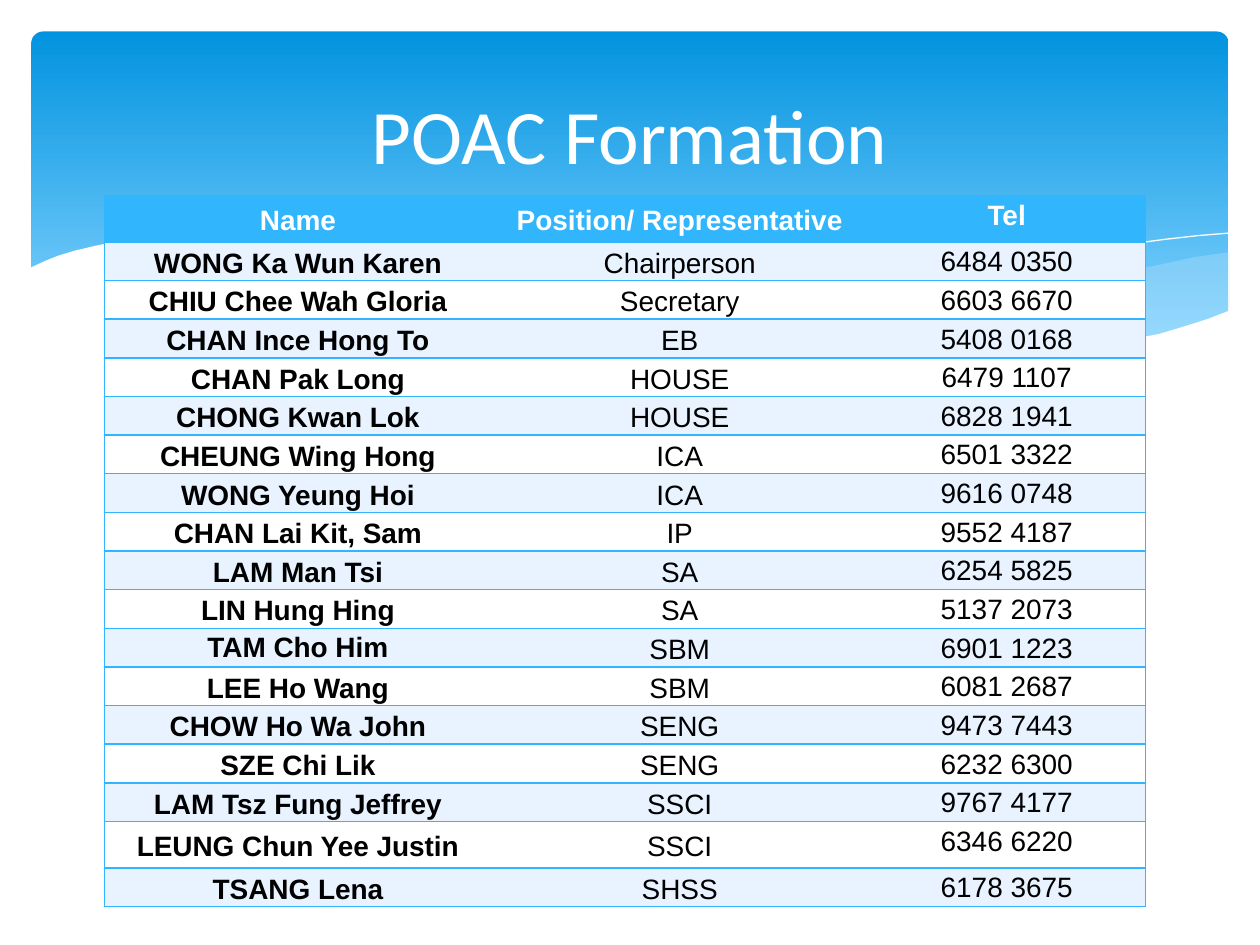
from lxml.etree import SubElement
from pptx import Presentation
from pptx.dml.color import RGBColor
from pptx.enum.shapes import MSO_SHAPE
from pptx.enum.text import MSO_ANCHOR, PP_ALIGN
from pptx.oxml.ns import qn
from pptx.util import Inches, Pt

WIDTH, HEIGHT = 10, 7.5
WHITE, BLACK = "FFFFFF", "000000"
SKY, PALE, MIST = "31B6FD", "E8F3FF", "C6E7FC"

# Table content
HEADER = ("Name", "Position/ Representative", "Tel")
MEMBERS = [
    ("WONG Ka Wun Karen", "Chairperson", "6484 0350"),
    ("CHIU Chee Wah Gloria", "Secretary", "6603 6670"),
    ("CHAN Ince Hong To", "EB", "5408 0168"),
    ("CHAN Pak Long", "HOUSE", "6479 1107"),
    ("CHONG Kwan Lok", "HOUSE", "6828 1941"),
    ("CHEUNG Wing Hong", "ICA", "6501 3322"),
    ("WONG Yeung Hoi", "ICA", "9616 0748"),
    ("CHAN Lai Kit, Sam", "IP", "9552 4187"),
    ("LAM Man Tsi", "SA", "6254 5825"),
    ("LIN Hung Hing", "SA", "5137 2073"),
    ("TAM Cho Him", "SBM", "6901 1223"),
    ("LEE Ho Wang", "SBM", "6081 2687"),
    ("CHOW Ho Wa John", "SENG", "9473 7443"),
    ("SZE Chi Lik", "SENG", "6232 6300"),
    ("LAM Tsz Fung Jeffrey", "SSCI", "9767 4177"),
    ("LEUNG Chun Yee Justin", "SSCI", "6346 6220"),
    ("TSANG Lena", "SHSS", "6178 3675"),
]
SINGLE_SPACED = "TAM Cho Him"
COLUMN_WIDTHS = (3.07, 2.99, 2.2)
ROW_HEIGHT, TALL_ROW_HEIGHT = 0.3035, 0.37
TALL_ROWS = (0, 16)

# Wave outlines, in inches
RIGHT_WAVE = [
    (9.76, 2), (9.48, 2.04), (9.21, 2.1), (8.91, 2.16), (8.61, 2.23), (8.05, 2.37),
    (7.53, 2.48), (7.06, 2.57), (6.61, 2.65), (6.91, 2.69), (7.19, 2.72), (7.45, 2.75),
    (7.69, 2.77), (8.03, 2.78), (8.35, 2.77), (8.63, 2.75), (8.89, 2.72), (9.13, 2.67),
    (9.35, 2.62), (9.49, 2.57), (9.63, 2.52), (9.76, 2.47)]
MIDDLE_WAVE = [
    (8.93, 2.73), (8.66, 2.69), (8.07, 2.6), (7.41, 2.47), (6.68, 2.31), (6.29, 2.22),
    (5.98, 2.14), (5.69, 2.08), (5.41, 2.03), (5.14, 1.98), (4.89, 1.94), (4.42, 1.89),
    (3.99, 1.86), (3.61, 1.85), (3.28, 1.87), (2.86, 1.91), (3.23, 1.96), (3.62, 2.03),
    (4.04, 2.11), (4.49, 2.22), (5.3, 2.4), (5.84, 2.52), (6.18, 2.58), (6.5, 2.64),
    (6.8, 2.68), (7.09, 2.72), (7.36, 2.75), (7.61, 2.77), (7.96, 2.78), (8.28, 2.78),
    (8.57, 2.77), (8.76, 2.75)]
FALLING_CURVE = [
    (3.09, 1.95), (3.28, 1.92), (3.53, 1.89), (3.87, 1.87), (4.33, 1.87), (4.69, 1.89),
    (5.1, 1.92), (5.56, 1.97), (6.08, 2.04), (6.65, 2.13), (7.27, 2.26), (7.95, 2.41),
    (8.69, 2.61), (9.07, 2.72)]
RISING_CURVE = [
    (6.13, 2.57), (6.53, 2.46), (6.95, 2.35), (7.48, 2.23), (8.06, 2.1), (8.66, 1.99),
    (8.95, 1.94), (9.24, 1.9), (9.51, 1.87), (9.75, 1.85)]
WHITE_WAVE = [
    (9.77, 2.46), (9.59, 2.53), (9.4, 2.59), (9.2, 2.65), (8.99, 2.69), (8.75, 2.73),
    (8.5, 2.75), (8.23, 2.77), (7.93, 2.76), (7.61, 2.75), (7.26, 2.72), (6.88, 2.68),
    (6.48, 2.62), (6.03, 2.54), (5.55, 2.45), (5.03, 2.33), (4.47, 2.2), (3.91, 2.07),
    (3.4, 1.97), (2.92, 1.9), (2.5, 1.86), (2.11, 1.84), (1.77, 1.84), (1.46, 1.85),
    (1.19, 1.87), (0.95, 1.91), (0.76, 1.95), (0.59, 1.99), (0.46, 2.03), (0.36, 2.07),
    (0.23, 2.13), (0.23, 3.29), (9.77, 3.29)]


def color(hex_code):
    return RGBColor.from_string(hex_code)


def write_text(frame, text, *, size, font, fill, bold=False, spacing=None):
    paragraph = frame.paragraphs[0]
    paragraph.alignment = PP_ALIGN.CENTER
    if spacing:
        paragraph.line_spacing = spacing
    run = paragraph.add_run()
    run.text = text
    run.font.size, run.font.name, run.font.bold = Pt(size), font, bold
    run.font.color.rgb = color(fill)


def add_outline(slide, points, *, fill=None, opacity=100, line=None):
    corners = [(Inches(x), Inches(y)) for x, y in points]
    builder = slide.shapes.build_freeform(*corners[0])
    builder.add_line_segments(corners[1:], close=fill is not None)
    shape = builder.convert_to_shape()
    shape.shadow.inherit = False
    if fill:
        shape.fill.solid()
        shape.fill.fore_color.rgb = color(fill)
        if opacity < 100:
            solid = shape.fill._xPr.find(qn("a:solidFill"))
            SubElement(solid[0], qn("a:alpha"), val=str(opacity * 1000))
    else:
        shape.fill.background()
    if line:
        shape.line.color.rgb = color(line)
        shape.line.width = 0
    else:
        shape.line.fill.background()


def add_banner(slide):
    margin = 0.025 * WIDTH
    banner = slide.shapes.add_shape(
        MSO_SHAPE.ROUNDED_RECTANGLE, Inches(margin), Inches(margin),
        Inches(WIDTH - 2 * margin), Inches(0.36 * HEIGHT))
    banner.adjustments[0] = 0.034
    banner.shadow.inherit = False
    banner.line.fill.background()
    banner.fill.gradient()
    banner.fill.gradient_angle = 270
    stops = banner.fill.gradient_stops
    for stop, position, shade in zip(stops, (0, 0.9), ("0293E0", "83D3FE")):
        stop.position = position
        stop.color.rgb = color(shade)


def add_title(slide, text):
    box = slide.shapes.add_textbox(Inches(0.05 * WIDTH), Inches(0.05 * HEIGHT),
                                   Inches(0.9 * WIDTH), Inches(1.37))
    box.text_frame.word_wrap = True
    box.text_frame.vertical_anchor = MSO_ANCHOR.MIDDLE
    write_text(box.text_frame, text, size=44, font="Calibri", fill=WHITE)


def add_borders(cell, sides):
    properties = cell._tc.get_or_add_tcPr()
    for side in sides:
        border = SubElement(properties, qn(f"a:ln{side}"), w=str(Pt(1)))
        solid = SubElement(border, qn("a:solidFill"))
        SubElement(solid, qn("a:srgbClr"), val=SKY)


def format_cell(cell, text, row, column):
    add_borders(cell, ("LTB", "TB", "RTB")[column])
    cell.fill.solid()
    cell.fill.fore_color.rgb = color(SKY if row == 0 else PALE if row % 2 else WHITE)
    cell.margin_left = cell.margin_right = Inches(0.07)
    cell.margin_top = cell.margin_bottom = 0
    cell.vertical_anchor = MSO_ANCHOR.TOP if column == 2 else MSO_ANCHOR.MIDDLE
    write_text(cell.text_frame, text, size=16, font="Arial",
               fill=BLACK if row else WHITE, bold=row == 0 or column == 0,
               spacing=None if text == SINGLE_SPACED else 1.15)


def add_member_table(slide):
    records = [HEADER, *MEMBERS]
    heights = [TALL_ROW_HEIGHT if row in TALL_ROWS else ROW_HEIGHT
               for row in range(len(records))]
    table = slide.shapes.add_table(
        len(records), len(HEADER), Inches(0.83), Inches(1.55),
        Inches(sum(COLUMN_WIDTHS)), Inches(sum(heights))).table
    table.horz_banding = False
    table.first_row = False
    # Plain style without grid lines
    table._tbl.tblPr.find(qn("a:tableStyleId")).text = "{2D5ABB26-0587-4C30-8999-92F81FD0307C}"
    for column, width in enumerate(COLUMN_WIDTHS):
        table.columns[column].width = Inches(width)
    for row, record in enumerate(records):
        table.rows[row].height = Inches(heights[row])
        for column, text in enumerate(record):
            format_cell(table.cell(row, column), text, row, column)


def main():
    presentation = Presentation()
    presentation.slide_width, presentation.slide_height = Inches(WIDTH), Inches(HEIGHT)
    slide = presentation.slides.add_slide(presentation.slide_layouts[6])

    # Banner with waves
    add_banner(slide)
    add_outline(slide, RIGHT_WAVE, fill=MIST, opacity=29)
    add_outline(slide, MIDDLE_WAVE, fill=MIST, opacity=40)
    add_outline(slide, FALLING_CURVE, line=WHITE)
    add_outline(slide, RISING_CURVE, line=WHITE)
    add_outline(slide, WHITE_WAVE, fill=WHITE)

    # Title and member list
    add_title(slide, "POAC Formation")
    add_member_table(slide)
    presentation.save("out.pptx")


if __name__ == "__main__":
    main()
